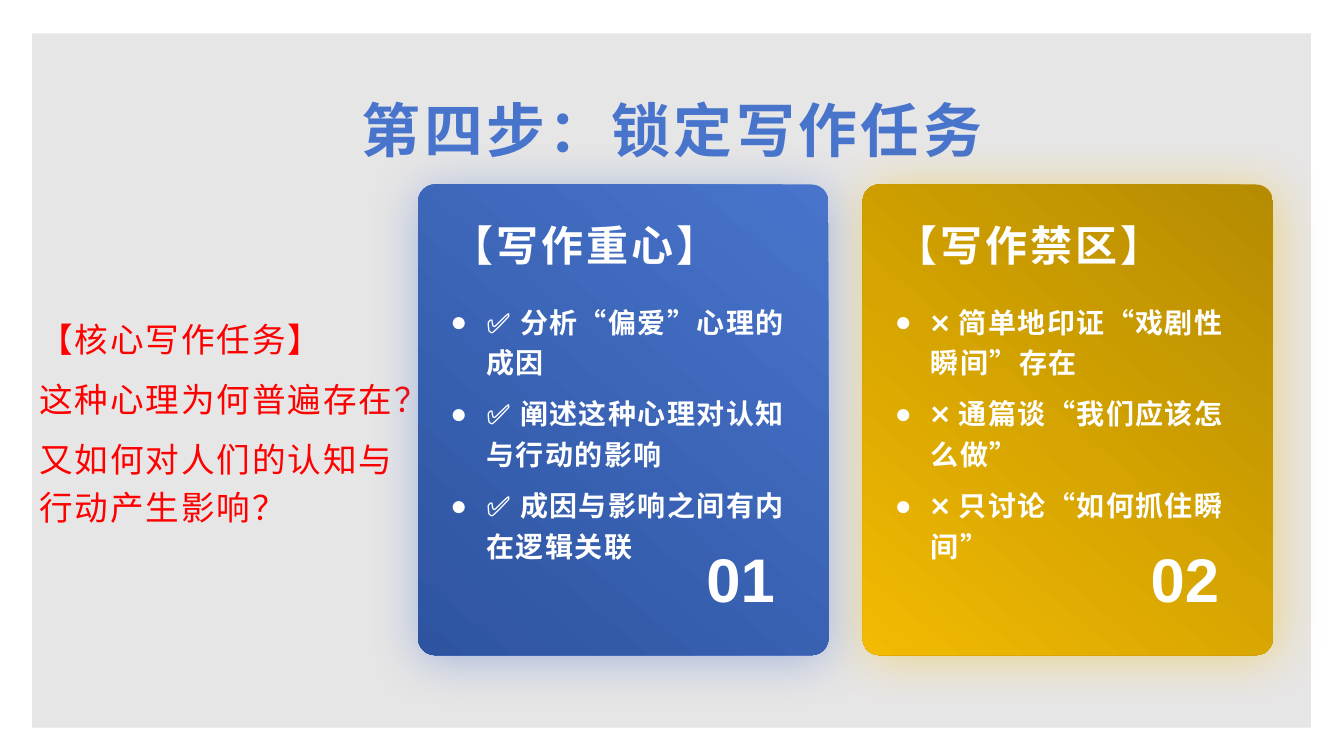
import pptx
import pptx.dml.color
import pptx.enum.shapes
import pptx.enum.text
import pptx.oxml.ns
import pptx.util
from lxml import etree

Cm, Pt = pptx.util.Cm, pptx.util.Pt
SHAPE = pptx.enum.shapes.MSO_SHAPE
ALIGN = pptx.enum.text.PP_ALIGN
ANCHOR = pptx.enum.text.MSO_ANCHOR
CJK = "Noto Sans CJK SC"
WHITE = "FFFFFF"

TITLE = "第四步：锁定写作任务"
TASK = ["【核心写作任务】", "这种心理为何普遍存在？", "又如何对人们的认知与行动产生影响？"]
CARDS = [
    {"head": "【写作重心】", "num": "01", "mark": "✅",
     "items": ["分析“偏爱”心理的成因", "阐述这种心理对认知与行动的影响",
               "成因与影响之间有内在逻辑关联"],
     "grad": ("4874CB", "2E54A1"), "glow": "4874CB", "turn": 95},
    {"head": "【写作禁区】", "num": "02", "mark": "❌",
     "items": ["简单地印证“戏剧性瞬间”存在", "通篇谈“我们应该怎么做”",
               "只讨论“如何抓住瞬间”"],
     "grad": ("B58B01", "F2BA02"), "glow": "F2BA02", "turn": 45},
]
LEFT, TOP, WIDE, HIGH, PITCH = 10.54, 4.65, 10.34, 11.86, 11.2

deck = pptx.Presentation()
deck.slide_width, deck.slide_height = Cm(33.87), Cm(19.05)
slide = deck.slides.add_slide(deck.slide_layouts[6])


def tint(code):
    return pptx.dml.color.RGBColor.from_string(code)


def node(parent, tag, **attrs):
    """Append a DrawingML child with the given attributes."""
    child = etree.SubElement(parent, pptx.oxml.ns.qn("a:" + tag))
    for key, value in attrs.items():
        child.set(key, str(value))
    return child


def panel(kind, *box):
    shape = slide.shapes.add_shape(kind, *map(Cm, box))
    shape.shadow.inherit = False
    shape.line.fill.background()
    return shape


def write(lines, box, size, color=WHITE, font="Arial", bold=True, gap=0,
          anchor=ANCHOR.TOP, align=ALIGN.LEFT, inset=(0.25, 0.13),
          lead=None, after=None, bullet=None):
    frame = slide.shapes.add_textbox(*map(Cm, box)).text_frame
    frame.word_wrap = True
    frame.vertical_anchor = anchor
    frame.margin_left = frame.margin_right = Cm(inset[0])
    frame.margin_top = frame.margin_bottom = Cm(inset[1])
    for i, line in enumerate(lines):
        para = frame.paragraphs[0] if i == 0 else frame.add_paragraph()
        para.alignment = align
        if lead:
            para.line_spacing = lead
        if after:
            para.space_after = Pt(after)
        if bullet:
            props = para._p.get_or_add_pPr()
            props.set("marL", str(Cm(0.91)))
            props.set("indent", str(-Cm(0.91)))
            node(props, "buFont", typeface="Arial")
            node(props, "buChar", char=bullet)
        run = para.add_run()
        run.text = line
        run.font.size, run.font.bold, run.font.name = Pt(size), bold, font
        run.font.color.rgb = tint(color)
        style = run._r.get_or_add_rPr()
        style.set("spc", str(round(gap * 100)))
        node(style, "ea", typeface=CJK)


def glow(shape, color, turn):
    """Give the shape a soft coloured outer shadow."""
    effects = shape._element.spPr.find(pptx.oxml.ns.qn("a:effectLst"))
    outer = node(effects, "outerShdw", blurRad=Pt(36), dist=Pt(4),
                 dir=turn * 60000, algn="ctr", rotWithShape=0)
    node(node(outer, "srgbClr", val=color), "alpha", val=41000)


def draw_card(card, left):
    shape = panel(SHAPE.ROUNDED_RECTANGLE, left, TOP, WIDE, HIGH)
    shape.adjustments[0] = 0.041
    shape.fill.gradient()
    shape.fill.gradient_angle = 230
    for stop, color in zip(shape.fill.gradient_stops, card["grad"]):
        stop.color.rgb = tint(color)
    glow(shape, card["glow"], card["turn"])
    write([card["head"]], (left + 0.58, TOP + 0.48, 9.27, 2.06), 30,
          gap=2.2, anchor=ANCHOR.MIDDLE)
    write([f"{card['mark']} {item}" for item in card["items"]],
          (left + 0.56, TOP + 2.74, 9.27, 7.21), 20,
          gap=1, lead=1.2, after=8, bullet="●")
    write([card["num"]], (left + 7.01, TOP + 8.86, 3.33, 3), 44)


back = panel(SHAPE.RECTANGLE, 0.81, 0.84, 32.23, 17.5)
back.fill.solid()
back.fill.fore_color.rgb = tint("E7E6E6")
write([TITLE], (1.7, 2.11, 30.48, 2.11), 42, color="4874CB", font=CJK,
      gap=2.6, anchor=ANCHOR.BOTTOM, align=ALIGN.CENTER, inset=(0.18, 0.08))
write(TASK, (0.81, 5.28, 10.16, 10.57), 24, color="FF0000", font=CJK,
      bold=False, gap=1.4, anchor=ANCHOR.MIDDLE, inset=(0.18, 0.08),
      lead=1.2, after=8)
for i, card in enumerate(CARDS):
    draw_card(card, LEFT + i * PITCH)

deck.save("out.pptx")
